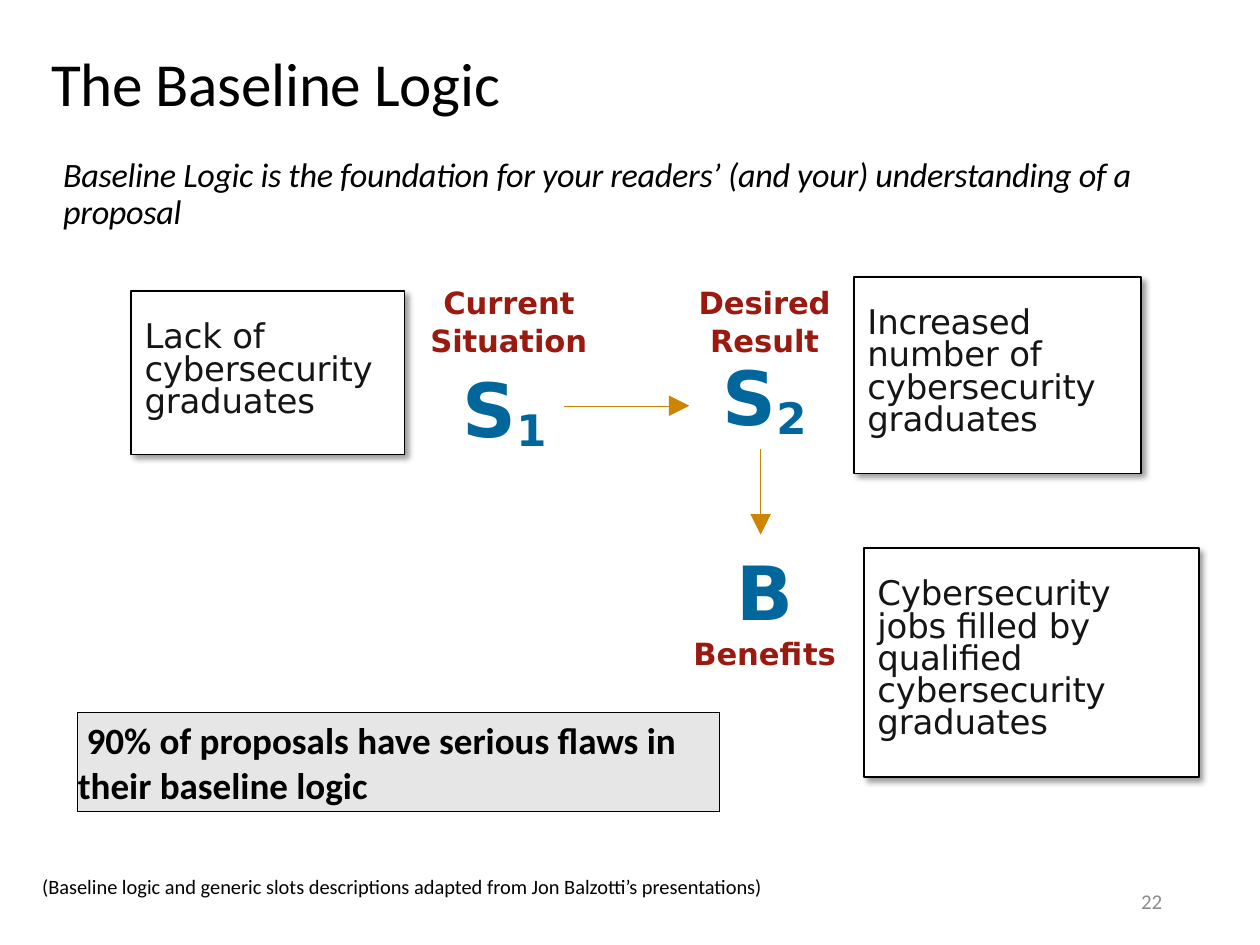
from dataclasses import dataclass

from lxml import etree
from pptx import Presentation, util as u
from pptx.dml.color import RGBColor
from pptx.enum import shapes, text
from pptx.oxml import ns


@dataclass(frozen=True)
class Theme:
    body: str = "Calibri"
    diagram: str = "DejaVu Sans"
    black: str = "000000"
    white: str = "FFFFFF"
    ink: str = "151515"
    grey: str = "8C8C8C"
    band: str = "E7E6E6"
    red: str = "9A1A0F"
    blue: str = "00669C"
    gold: str = "CD8500"
    title: float = 39.6
    subtitle: float = 22.1
    symbol: float = 48.4
    label: float = 19.8
    card: float = 22
    highlight: float = 24
    number: float = 13.6
    credit: float = 13.2


THEME = Theme()
CELL = 0.1
COLUMNS, ROWS = 113.3, 85
ALIGN = text.PP_ALIGN
ANCHOR = text.MSO_ANCHOR

STYLES = {
    "title": dict(size=THEME.title, color=THEME.black, tracking=-0.2),
    "subtitle": dict(size=THEME.subtitle, color=THEME.black, italic=True, tracking=-0.2),
    "label": dict(size=THEME.label, color=THEME.red, bold=True, font=THEME.diagram, tracking=-0.05),
    "symbol": dict(size=THEME.symbol, color=THEME.blue, bold=True, font=THEME.diagram),
    "index": dict(size=THEME.symbol, color=THEME.blue, bold=True, font=THEME.diagram, baseline=-13),
    "card": dict(size=THEME.card, color=THEME.ink, font=THEME.diagram, tracking=-0.1),
    "highlight": dict(size=THEME.highlight, color=THEME.black, bold=True),
    "number": dict(size=THEME.number, color=THEME.grey),
    "credit": dict(size=THEME.credit, color=THEME.black),
}

PADDED = (1, 0.5, 1, 0.5)
TEXTS = [
    dict(box=(4.6, 4.8, 99, 6), lines=[([("The Baseline Logic", "title")], 0.9)]),
    dict(box=(4.7, 13.7, 102.3, 7.7), insets=PADDED, lines=[([(
        "Baseline Logic is the foundation for your readers’ (and your) understanding of a proposal",
        "subtitle")], 0.9)]),
    dict(box=(38.6, 25.5, 14.3, 6.8), align=ALIGN.CENTER,
         lines=[([("Current Situation", "label")], 1.02)]),
    dict(box=(41.6, 32.6, 9, 8.1), lines=[([("S", "symbol"), ("1", "index")], 1.0)]),
    dict(box=(62.6, 25.5, 12.3, 14.5), align=ALIGN.CENTER,
         lines=[([("Desired Result", "label")], 1.02),
                ([("S", "symbol"), ("2", "index")], u.Pt(55.2))]),
    dict(box=(62.2, 49.2, 13.1, 11.4), align=ALIGN.CENTER,
         lines=[([("B", "symbol")], u.Pt(57.6)), ([("Benefits", "label")], u.Pt(23.3))]),
    dict(box=(2.8, 78.1, 73.1, 3.2), insets=PADDED, lines=[([(
        "(Baseline logic and generic slots descriptions adapted from Jon Balzotti’s presentations)",
        "credit")], 1.0)]),
    dict(box=(80, 78.8, 25.5, 4.5), insets=PADDED, align=ALIGN.RIGHT, anchor=ANCHOR.MIDDLE,
         lines=[([("22", "number")], 1.0)]),
]

CARDS = [
    ("Lack of cybersecurity graduates", (11.8, 26.2, 24.6, 14.7)),
    ("Increased number of cybersecurity graduates", (76.8, 24.9, 25.8, 17.7)),
    ("Cybersecurity jobs filled by qualified cybersecurity graduates", (77.7, 49.3, 30.1, 20.6)),
]
CARD_INSETS = (1.2, 2.9, 2, 0)
CARD_LEADING = u.Pt(20.9)

HIGHLIGHT = ("90% of proposals have serious flaws in their baseline logic", (7, 64.1, 57.7, 8.9))
HIGHLIGHT_INDENT = 0.8

ARROWS = [((50.7, 36.5), (62, 36.5)), ((68.4, 40.4), (68.4, 48.1))]
HEAD_LENGTH, HEAD_HALF = 1.85, 0.92


def cells(*values):
    return [u.Inches(value * CELL) for value in values]


def rgb(color):
    return RGBColor.from_string(color)


def add_run(paragraph, words, size, color, font=THEME.body, bold=False, italic=False,
            tracking=0, baseline=0):
    run = paragraph.add_run()
    run.text = words
    run.font.name = font
    run.font.size = u.Pt(size)
    run.font.bold = bold
    run.font.italic = italic
    run.font.color.rgb = rgb(color)
    properties = run.font._element
    if tracking:
        properties.set("spc", str(round(tracking * 100)))
    if baseline:
        properties.set("baseline", str(baseline * 1000))


def write(shape, lines, insets=(0, 0, 0, 0), align=ALIGN.LEFT, anchor=ANCHOR.TOP):
    frame = shape.text_frame
    frame.word_wrap = True
    frame.vertical_anchor = anchor
    (frame.margin_left, frame.margin_top,
     frame.margin_right, frame.margin_bottom) = cells(*insets)
    for number, (runs, leading) in enumerate(lines):
        paragraph = frame.add_paragraph() if number else frame.paragraphs[0]
        paragraph.alignment = align
        paragraph.line_spacing = leading
        for words, style in runs:
            add_run(paragraph, words, **STYLES[style])


def add_panel(slide, box, fill, line_width):
    shape = slide.shapes.add_shape(shapes.MSO_SHAPE.RECTANGLE, *cells(*box))
    shape.shadow.inherit = False
    shape.fill.solid()
    shape.fill.fore_color.rgb = rgb(fill)
    shape.line.color.rgb = rgb(THEME.black)
    shape.line.width = u.Pt(line_width)
    return shape


def cast_shadow(shape):
    effects = shape._element.spPr.find(ns.qn("a:effectLst"))
    shadow = etree.SubElement(effects, ns.qn("a:outerShdw"), blurRad=str(u.Pt(4)),
                              dist=str(u.Pt(3)), dir="2700000", algn="tl", rotWithShape="0")
    color = etree.SubElement(shadow, ns.qn("a:srgbClr"), val=THEME.black)
    etree.SubElement(color, ns.qn("a:alpha"), val="40000")


def add_arrow(slide, start, tip):
    (x, y), (tip_x, tip_y) = start, tip
    length = abs(tip_x - x) + abs(tip_y - y)
    step_x, step_y = (tip_x - x) / length, (tip_y - y) / length
    base_x, base_y = tip_x - step_x * HEAD_LENGTH, tip_y - step_y * HEAD_LENGTH
    shaft = slide.shapes.add_connector(shapes.MSO_CONNECTOR.STRAIGHT,
                                       *cells(x, y, base_x, base_y))
    shaft.line.color.rgb = rgb(THEME.gold)
    shaft.line.width = u.Pt(0.25)
    etree.SubElement(shaft._element.spPr, ns.qn("a:effectLst"))
    corners = [cells(base_x + side * step_y * HEAD_HALF, base_y + side * step_x * HEAD_HALF)
               for side in (1, -1)]
    builder = slide.shapes.build_freeform(*corners[0], scale=1.0)
    builder.add_line_segments([corners[1], cells(tip_x, tip_y)], close=True)
    head = builder.convert_to_shape()
    head.shadow.inherit = False
    head.fill.solid()
    head.fill.fore_color.rgb = rgb(THEME.gold)
    head.line.fill.background()


def main():
    presentation = Presentation()
    presentation.slide_width, presentation.slide_height = cells(COLUMNS, ROWS)
    slide = presentation.slides.add_slide(presentation.slide_layouts[6])

    for arrow in ARROWS:
        add_arrow(slide, *arrow)
    for words, box in CARDS:
        card = add_panel(slide, box, THEME.white, 1)
        cast_shadow(card)
        write(card, [([(words, "card")], CARD_LEADING)], CARD_INSETS)

    words, box = HIGHLIGHT
    highlight = add_panel(slide, box, THEME.band, 0.75)
    write(highlight, [([(words, "highlight")], 1.0)], anchor=ANCHOR.MIDDLE)
    properties = highlight.text_frame.paragraphs[0]._p.get_or_add_pPr()
    properties.set("indent", str(cells(HIGHLIGHT_INDENT)[0]))

    for entry in TEXTS:
        details = dict(entry)
        write(slide.shapes.add_textbox(*cells(*details.pop("box"))), **details)

    presentation.save("out.pptx")


if __name__ == "__main__":
    main()
